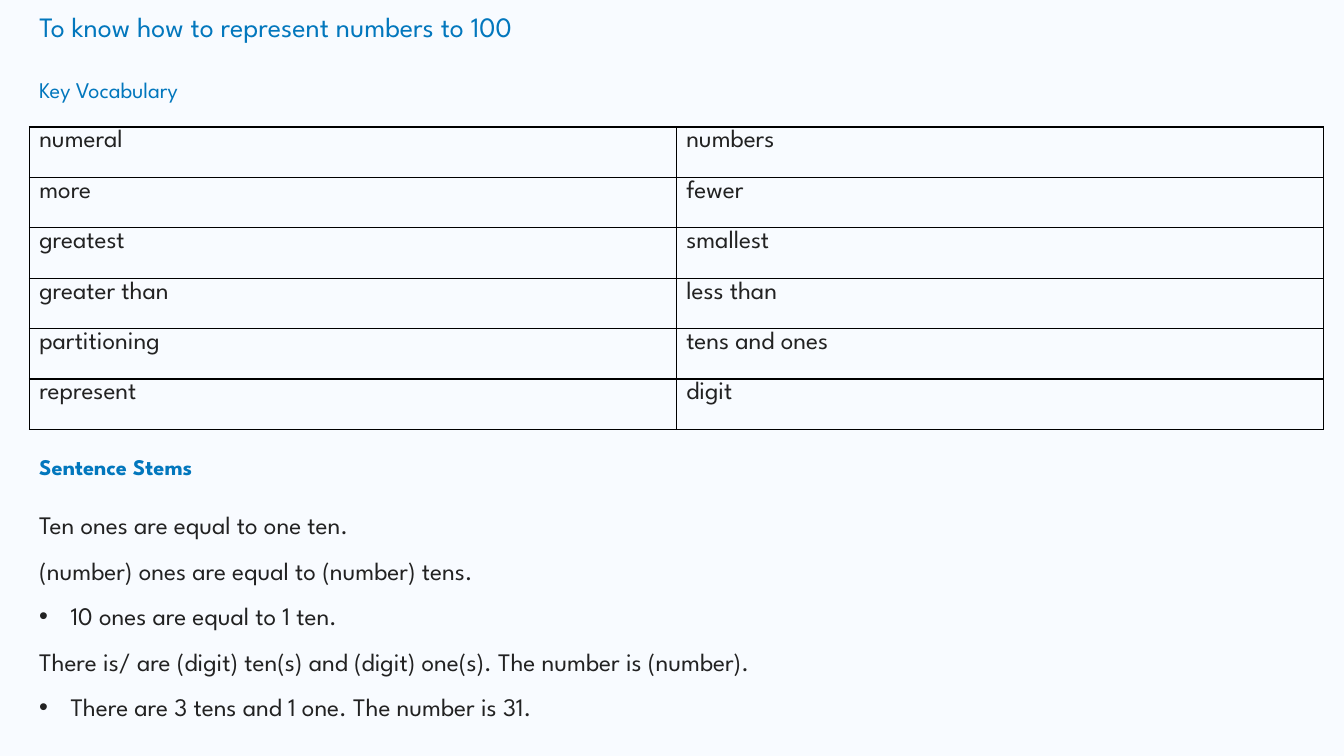
"""Build the key vocabulary and sentence stems slide for numbers to 100."""
from lxml.etree import SubElement
from pptx import Presentation
from pptx.dml.color import RGBColor
from pptx.enum.text import MSO_ANCHOR, PP_ALIGN
from pptx.oxml.ns import qn
from pptx.util import Cm, Pt

BLUE, INK = "0277BD", "222222"
LEFT = Cm(0.74)


def style(para, size, color, bold=False):
    para.alignment = PP_ALIGN.LEFT
    for run in para.runs:
        font = run.font
        font.name, font.size, font.bold = "League Spartan", Pt(size), bold
        font.color.rgb = RGBColor.from_string(color)


def paint(parent, color):
    fill = SubElement(parent, qn("a:solidFill"))
    SubElement(fill, qn("a:srgbClr"), val=color)


deck = Presentation()
deck.slide_width, deck.slide_height = Cm(33.87), Cm(19.05)
slide = deck.slides.add_slide(deck.slide_layouts[5])
back = slide.background.fill
back.solid()
back.fore_color.rgb = RGBColor.from_string("F8FBFF")

title = slide.shapes.title
title.left, title.top, title.width, title.height = LEFT, Cm(0.1), Cm(31.34), Cm(1.12)
frame = title.text_frame
frame.text = "To know how to represent numbers to 100"
frame.vertical_anchor = MSO_ANCHOR.TOP
style(frame.paragraphs[0], 20, BLUE)

words = [
    ("numeral", "numbers"),
    ("more", "fewer"),
    ("greatest", "smallest"),
    ("greater than", "less than"),
    ("partitioning", "tens and ones"),
    ("represent", "digit"),
]
table = slide.shapes.add_table(len(words), 2, LEFT, Cm(3.2), Cm(32.61), Cm(7.62)).table
table.first_row = table.horz_banding = False
for r, pair in enumerate(words):
    for c, word in enumerate(pair):
        cell = table.cell(r, c)
        cell.text = word
        cell.margin_left = cell.margin_right = cell.margin_bottom = Cm(0.25)
        cell.margin_top = Cm(0.08)
        style(cell.text_frame.paragraphs[0], 18, INK)
        props = cell._tc.get_or_add_tcPr()
        for side in ("lnL", "lnR", "lnT", "lnB"):
            paint(SubElement(props, qn(f"a:{side}"), w=str(Pt(1))), "000000")
        cell.fill.background()

for text, top, bold in (("Key Vocabulary", 1.8, False), ("Sentence Stems", 11.3, True)):
    frame = slide.shapes.add_textbox(LEFT, Cm(top), Cm(7.54), Cm(1.17)).text_frame
    frame.word_wrap = True
    frame.text = text
    style(frame.paragraphs[0], 16, BLUE, bold)

stems = [
    ("Ten ones are equal to one ten.", False),
    ("(number) ones are equal to (number) tens.", False),
    ("10 ones are equal to 1 ten.", True),
    ("There is/ are (digit) ten(s) and (digit) one(s). The number is (number).", False),
    ("There are 3 tens and 1 one. The number is 31.", True),
]
frame = slide.shapes.add_textbox(LEFT, Cm(12.34), Cm(32.59), Cm(5.64)).text_frame
frame.word_wrap = True
frame.text = "\n".join(text for text, _ in stems)
for para, (_, point) in zip(frame.paragraphs, stems):
    if point:
        props = para._p.get_or_add_pPr()
        props.set("marL", str(Cm(0.79)))
        props.set("indent", str(-Cm(0.79)))
        paint(SubElement(props, qn("a:buClr")), INK)
        color = props.find(qn("a:buClr"))
        color.replace(color[0], color[0][0])
        SubElement(props, qn("a:buFont"), typeface="Arial")
        SubElement(props, qn("a:buChar"), char="•")
    para.line_spacing = 1.5
    style(para, 18, INK)

deck.save("out.pptx")
